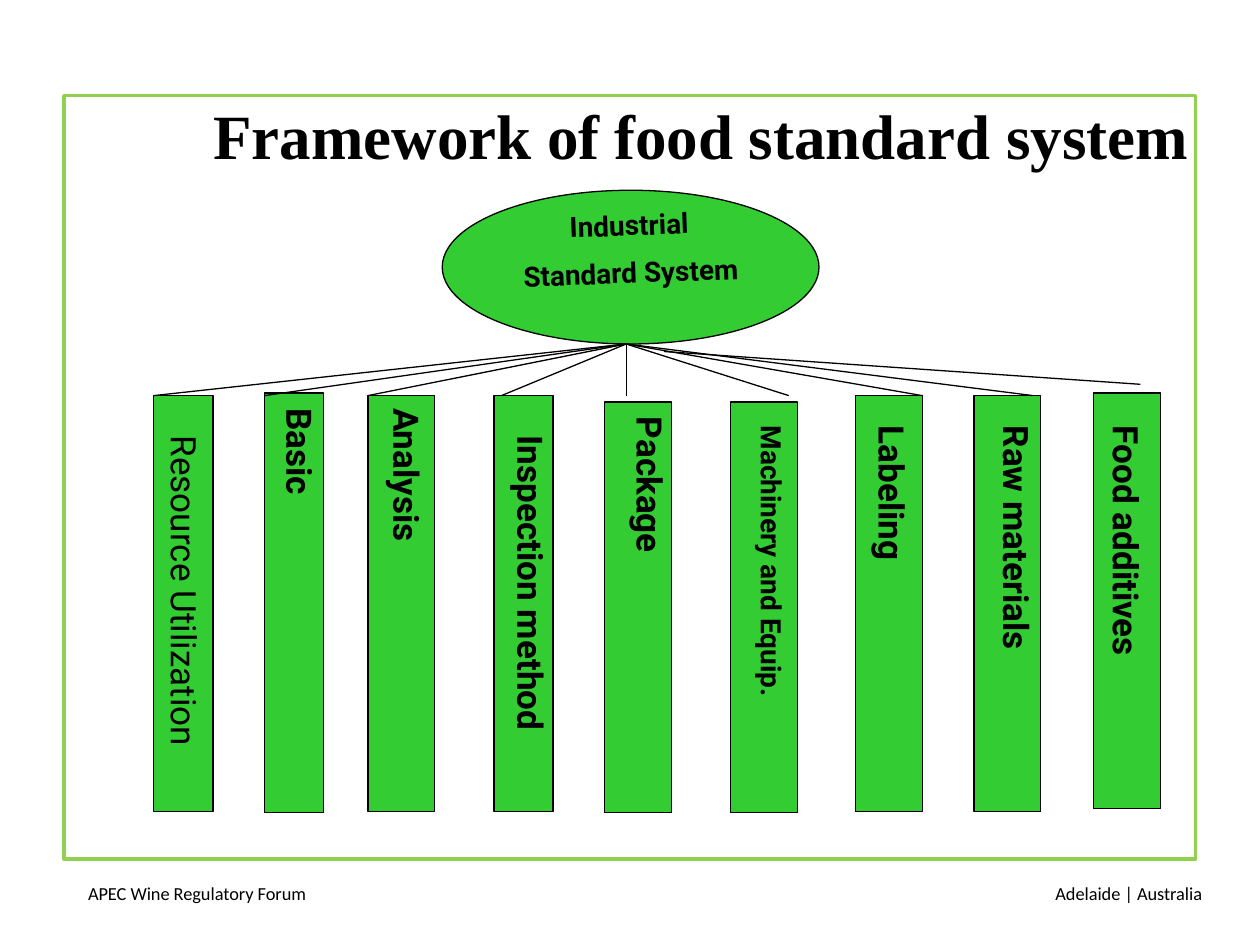
from lxml.etree import SubElement
from pptx import Presentation
from pptx.dml.color import RGBColor
from pptx.enum.shapes import MSO_CONNECTOR, MSO_SHAPE
from pptx.enum.text import MSO_ANCHOR, MSO_AUTO_SIZE, PP_ALIGN
from pptx.oxml.ns import qn
from pptx.util import Inches, Pt

BLACK = RGBColor(0x00, 0x00, 0x00)
GREEN = RGBColor(0x33, 0xCC, 0x33)
FRAME_GREEN = RGBColor(0x92, 0xD0, 0x50)

BARS = [
    (1.22, 3.14, 0.47, 3.3),
    (2.1, 3.12, 0.47, 3.33),
    (2.92, 3.14, 0.53, 3.3),
    (3.92, 3.14, 0.47, 3.3),
    (4.8, 3.19, 0.53, 3.26),
    (5.8, 3.19, 0.53, 3.26),
    (6.79, 3.14, 0.53, 3.3),
    (7.73, 3.14, 0.53, 3.3),
    (8.68, 3.12, 0.53, 3.3),
]
LABELS = [
    ("Basic", (2.07, 3.14, 0.53, 3.06), 20, True, 1),
    ("Analysis", (2.92, 3.14, 0.53, 2.99), 20, True, 1),
    ("Package", (4.85, 3.21, 0.53, 2.65), 20, True, 1),
    ("Machinery and Equip.", (5.84, 3.28, 0.47, 2.93), 16, True, 1),
    ("Labeling", (6.77, 3.28, 0.53, 2.72), 20, True, 1),
    ("Raw materials", (7.76, 3.28, 0.53, 2.72), 20, True, 1),
    ("Inspection method", (3.9, 3.36, 0.47, 2.76), 20, True, 0.8),
    ("Resource Utilization", (1.15, 3.36, 0.47, 2.76), 20, False, 0.8),
]
HUB = (4.97, 2.73)
BRANCH_ENDS = [1.22, 2.1, 2.92, 3.98, 4.97, 6.26, 7.32, 8.2]
BRANCH_BOTTOM = 3.14


def inches(values):
    return [Inches(value) for value in values]


def add_outline(page, kind, place, fill, line, width):
    shape = page.shapes.add_shape(kind, *inches(place))
    shape.shadow.inherit = False
    if fill is None:
        shape.fill.background()
    else:
        shape.fill.solid()
        shape.fill.fore_color.rgb = fill
    shape.line.color.rgb = line
    shape.line.width = Pt(width)


def add_line(page, start, end):
    line = page.shapes.add_connector(MSO_CONNECTOR.STRAIGHT, *inches(start + end))
    line.line.color.rgb = BLACK
    line.line.width = Pt(0.75)
    SubElement(line._element.spPr, qn("a:effectLst"))


def add_span(para, text, size, name, bold=False):
    span = para.add_run()
    span.text = text
    span.font.size = Pt(size)
    span.font.name = name
    span.font.bold = bold
    span.font.color.rgb = BLACK


def add_text(page, place, lines, size, name, bold=False, align=PP_ALIGN.CENTER):
    box = page.shapes.add_textbox(*inches(place))
    frame = box.text_frame
    frame.word_wrap = True
    for index, line in enumerate(lines):
        para = frame.add_paragraph() if index else frame.paragraphs[0]
        para.alignment = align
        if index:
            para.space_before = Pt(size / 2)
        add_span(para, line, size, name, bold)
    return box


def add_vertical_label(page, text, place, size, bold, spacing, align=PP_ALIGN.CENTER):
    box = add_text(page, place, [text], size, "Roboto", bold, align)
    frame = box.text_frame
    frame.auto_size = MSO_AUTO_SIZE.SHAPE_TO_FIT_TEXT
    frame.paragraphs[0].line_spacing = spacing
    frame._txBody.bodyPr.set("vert", "eaVert")
    return box


def add_title(page):
    title = page.shapes.title
    title.left, title.top, title.width, title.height = inches((1, 0.31, 9, 1.51))
    frame = title.text_frame
    frame.word_wrap = True
    frame.auto_size = MSO_AUTO_SIZE.NONE
    frame.vertical_anchor = MSO_ANCHOR.MIDDLE
    para = frame.paragraphs[0]
    para.alignment = PP_ALIGN.CENTER
    for text, size in ((" Framework of", 36), (" ", 32), ("food standard system", 36)):
        add_span(para, text, size, "Times New Roman", True)


def main():
    deck = Presentation()
    deck.slide_width = Inches(10)
    deck.slide_height = Inches(7.5)
    page = deck.slides.add_slide(deck.slide_layouts[5])

    add_text(page, (0.6, 6.95, 2.35, 0.4), ["APEC Wine Regulatory Forum"],
             10.5, "Calibri", align=PP_ALIGN.LEFT)
    add_text(page, (7.29, 6.95, 2.35, 0.4), ["Adelaide | Australia"],
             10.5, "Calibri", align=PP_ALIGN.RIGHT)
    add_outline(page, MSO_SHAPE.RECTANGLE, (0.51, 0.76, 8.98, 6.06), None, FRAME_GREEN, 2)

    add_outline(page, MSO_SHAPE.OVAL, (3.51, 1.51, 2.99, 1.22), GREEN, BLACK, 0.75)
    system = add_text(page, (3.77, 1.6, 2.46, 0.77), ["Industrial", "Standard System"],
                      16, "Roboto", True)
    system.rotation = 357.9

    for place in BARS:
        add_outline(page, MSO_SHAPE.RECTANGLE, place, GREEN, BLACK, 0.75)
    for label in LABELS:
        add_vertical_label(page, *label)
    additives = add_vertical_label(page, "Food additives", (8.63, 3.28, 0.53, 2.13),
                                   20, True, 1, PP_ALIGN.LEFT)
    additives.text_frame.word_wrap = False

    for end in BRANCH_ENDS:
        add_line(page, HUB, (end, BRANCH_BOTTOM))
    add_line(page, (5.27, 2.79), (9.05, 3.05))
    add_title(page)
    deck.save("out.pptx")


if __name__ == "__main__":
    main()
